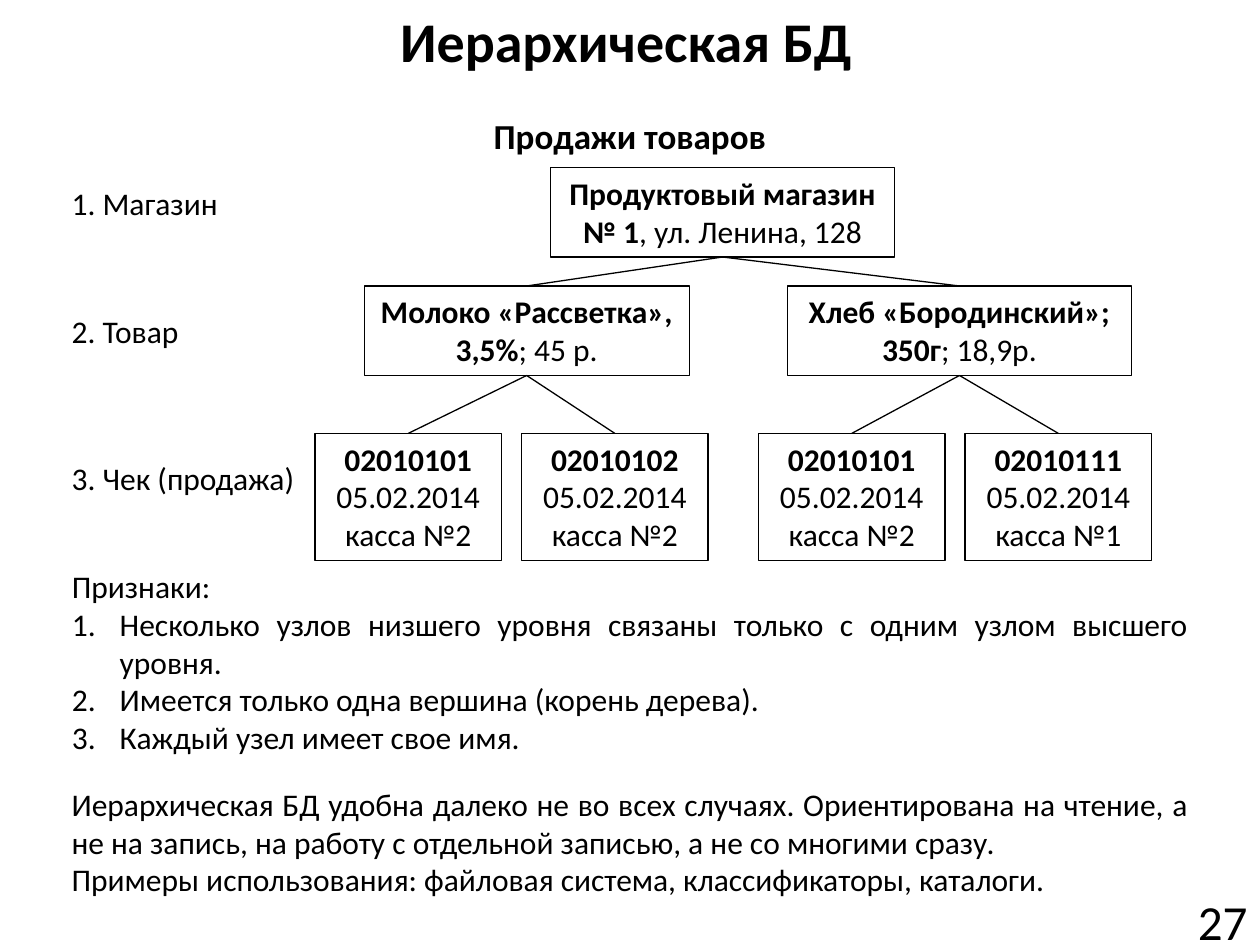
import pptx
import pptx.dml.color
import pptx.enum.shapes
import pptx.enum.text
import pptx.oxml.ns
import pptx.util
from lxml import etree

Inches = pptx.util.Inches
Pt = pptx.util.Pt
ALIGN = pptx.enum.text.PP_ALIGN
TOP, BOTTOM = 0, 2  # connection sites of a rectangle

COLORS = {"ink": "000000"}
FONT = {"name": "Calibri", "size": Pt(18)}
PARAGRAPH = {"space_before": Pt(0), "space_after": Pt(0), "line_spacing": 1.0}
INDENT = Inches(0.38)
LEFT, WIDTH = 0.47, 9.06

LEVELS = [("1. Магазин", 1.41, 1.37), ("2. Товар", 2.43, 1.06),
          ("3. Чек (продажа)", 3.59, 1.99)]

# name: (parent, left, top, width, height, paragraphs of (bold, plain))
NODES = {
    "shop": (None, 4.37, 1.33, 2.73, 0.71,
             [("Продуктовый магазин № 1", ", ул. Ленина, 128")]),
    "milk": ("shop", 2.89, 2.27, 2.58, 0.71,
             [("Молоко «Рассветка», 3,5%", "; 45 р.")]),
    "bread": ("shop", 6.25, 2.27, 2.73, 0.71,
              [("Хлеб «Бородинский»; 350г", "; 18,9р.")]),
}
RECEIPTS = [("milk", 2.5, "02010101", 2), ("milk", 4.14, "02010102", 2),
            ("bread", 6.02, "02010101", 2), ("bread", 7.66, "02010111", 1)]
for product, left, number, desk in RECEIPTS:
    NODES[product, number] = (product, left, 3.44, 1.48, 1.01,
                              [(number, ""), ("", f"05.02.2014 касса №{desk}")])

FEATURES = ["Несколько узлов низшего уровня связаны только с одним узлом высшего уровня.",
            "Имеется только одна вершина (корень дерева).",
            "Каждый узел имеет свое имя."]
CONCLUSION = ["Иерархическая БД удобна далеко не во всех случаях. Ориентирована на чтение, "
              "а не на запись, на работу с отдельной записью, а не со многими сразу.",
              "Примеры использования: файловая система, классификаторы, каталоги."]


def ink():
    return pptx.dml.color.RGBColor.from_string(COLORS["ink"])


def set_attributes(target, values):
    for key, value in values.items():
        setattr(target, key, value)


def place(shape, *box):
    set_attributes(shape, dict(zip(("left", "top", "width", "height"), map(Inches, box))))


def write(frame, paragraphs, align, wrap=True, anchor=pptx.enum.text.MSO_ANCHOR.TOP, **font):
    """Fill a frame with paragraphs, each a list of (text, bold) runs."""
    set_attributes(frame, {"word_wrap": wrap, "vertical_anchor": anchor,
                           "auto_size": pptx.enum.text.MSO_AUTO_SIZE.NONE})
    for index, runs in enumerate(paragraphs):
        paragraph = frame.paragraphs[0] if index == 0 else frame.add_paragraph()
        set_attributes(paragraph, {**PARAGRAPH, "alignment": align})
        for text, bold in runs:
            if text:
                run = paragraph.add_run()
                run.text = text
                set_attributes(run.font, {**FONT, "bold": bold, **font})
                run.font.color.rgb = ink()


def add_label(slide, box, texts, align=ALIGN.LEFT, bold=False, **options):
    label = slide.shapes.add_textbox(*map(Inches, box))
    write(label.text_frame, [[(text, bold)] for text in texts], align, **options)


def add_node(slide, box, paragraphs):
    node = slide.shapes.add_shape(pptx.enum.shapes.MSO_SHAPE.RECTANGLE, *map(Inches, box))
    node.shadow.inherit = False
    node.fill.background()
    node.line.color.rgb = ink()
    node.line.width = Pt(0.75)
    write(node.text_frame, [[(bold, True), (plain, False)] for bold, plain in paragraphs],
          ALIGN.CENTER)
    return node


def add_branch(slide, parent, child):
    branch = slide.shapes.add_connector(pptx.enum.shapes.MSO_CONNECTOR.STRAIGHT, 0, 0, 0, 0)
    branch.begin_connect(parent, BOTTOM)
    branch.end_connect(child, TOP)
    branch.line.color.rgb = ink()
    branch.line.width = Pt(0.75)
    etree.SubElement(branch.element.spPr, pptx.oxml.ns.qn("a:effectLst"))


def set_bullet(paragraph, numbered):
    properties = paragraph._p.get_or_add_pPr()
    properties.set("marL", str(INDENT))
    properties.set("indent", str(-INDENT))
    bullet = etree.SubElement(properties,
                              pptx.oxml.ns.qn("a:buAutoNum" if numbered else "a:buNone"))
    if numbered:
        bullet.set("type", "arabicPeriod")


def add_features(body):
    place(body, LEFT, 4.45, WIDTH, 1.62)
    write(body.text_frame, [[(text, False)] for text in ["Признаки:", *FEATURES]],
          ALIGN.JUSTIFY)
    for index, paragraph in enumerate(body.text_frame.paragraphs):
        set_bullet(paragraph, numbered=index > 0)


def main():
    deck = pptx.Presentation()
    deck.slide_width, deck.slide_height = Inches(10), Inches(7.5)
    slide = deck.slides.add_slide(deck.slide_layouts[1])

    # Headings and slide number
    title = slide.shapes.title
    place(title, LEFT, 0, 9, 0.94)
    write(title.text_frame, [[("Иерархическая БД", True)]], ALIGN.CENTER, size=Pt(32))
    add_label(slide, (0, 0.86, 10, 0.44), ["Продажи товаров"], ALIGN.CENTER,
              bold=True, size=Pt(20))
    add_label(slide, (8.98, 7.11, 1.02, 0.39), ["27"], ALIGN.RIGHT, size=Pt(28),
              anchor=pptx.enum.text.MSO_ANCHOR.MIDDLE)

    # Tree with its level names
    for text, top, width in LEVELS:
        add_label(slide, (LEFT, top, width, 0.4), [text], wrap=False)
    nodes = {name: add_node(slide, box, paragraphs)
             for name, (_, *box, paragraphs) in NODES.items()}
    for name, (parent, *_) in NODES.items():
        if parent:
            add_branch(slide, nodes[parent], nodes[name])

    # Features and conclusion
    add_features(slide.placeholders[1])
    add_label(slide, (LEFT, 6.18, WIDTH, 1.01), CONCLUSION, ALIGN.JUSTIFY)

    deck.save("out.pptx")


if __name__ == "__main__":
    main()
